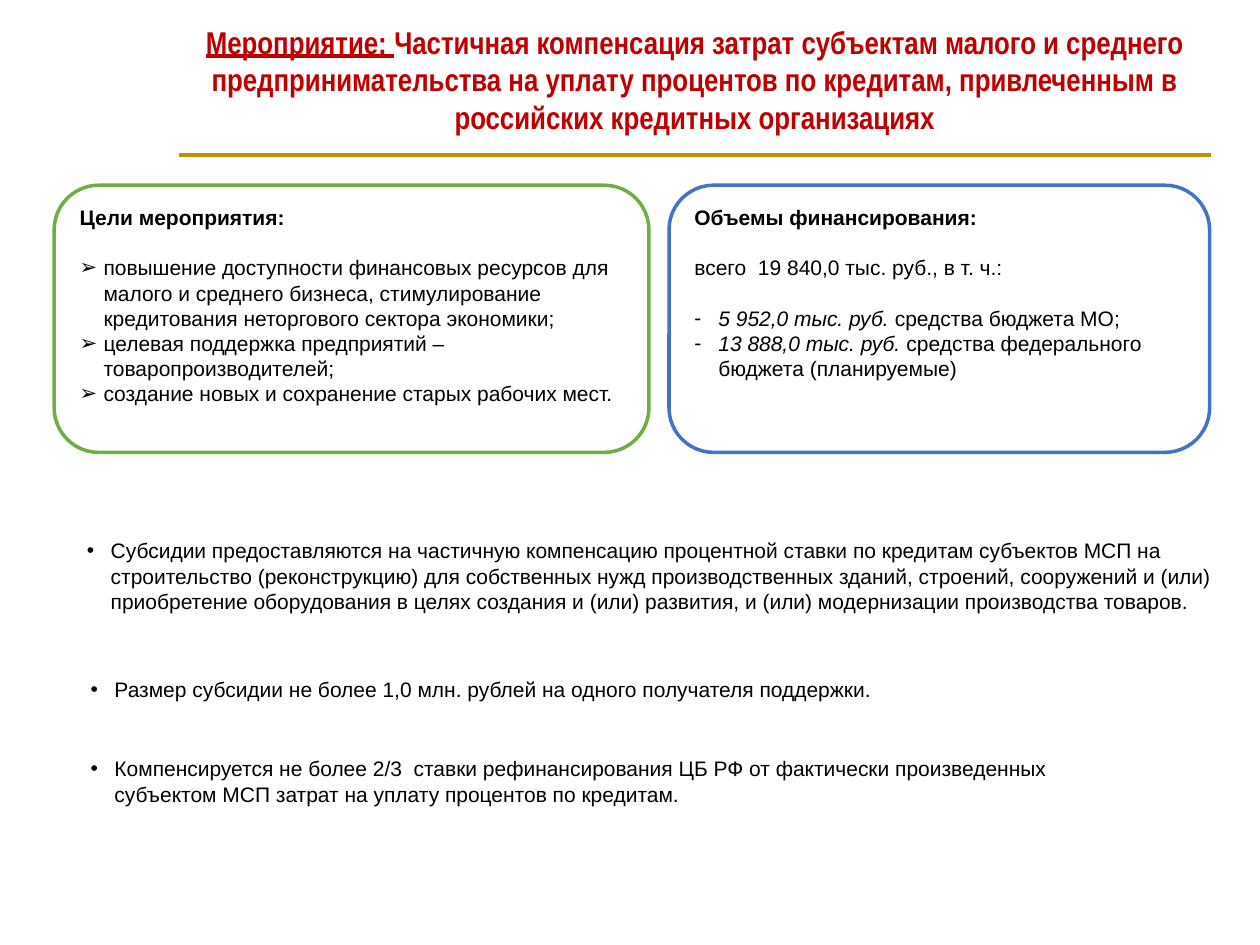
from lxml import etree
from pptx import Presentation
from pptx.dml.color import RGBColor
from pptx.enum.shapes import MSO_CONNECTOR, MSO_SHAPE
from pptx.enum.text import MSO_ANCHOR, PP_ALIGN
from pptx.oxml.ns import qn
from pptx.util import Inches, Pt

RED = RGBColor(0xC0, 0x00, 0x00)
GOLD = RGBColor(0xBF, 0x90, 0x00)
GREEN = RGBColor(0x70, 0xAD, 0x47)
BLUE = RGBColor(0x44, 0x72, 0xC4)
BLACK = RGBColor(0x00, 0x00, 0x00)
WHITE = RGBColor(0xFF, 0xFF, 0xFF)


def set_bullet(paragraph, symbol):
    properties = paragraph._p.get_or_add_pPr()
    indent = Inches(0.19)
    properties.set("marL", str(indent))
    properties.set("indent", str(-indent))
    font = etree.SubElement(properties, qn("a:buFont"))
    font.set("typeface", "Arial")
    etree.SubElement(properties, qn("a:buChar")).set("char", symbol)


def write_paragraph(paragraph, runs, bullet=None, bold=False, gap=0):
    """Write (text, italic) runs as one left-aligned body paragraph."""
    if bullet:
        set_bullet(paragraph, bullet)
    paragraph.alignment = PP_ALIGN.LEFT
    paragraph.space_before = Pt(gap)
    paragraph.font.name = "Arial"
    paragraph.font.size = Pt(12)
    paragraph.font.bold = bold
    paragraph.font.color.rgb = BLACK
    for text, italic in runs:
        run = paragraph.add_run()
        run.text = text
        if italic:
            run.font.italic = True


prs = Presentation()
prs.slide_width, prs.slide_height = Inches(10), Inches(7.5)
slide = prs.slides.add_slide(prs.slide_layouts[5])

# Title
title = slide.shapes.title
title.left, title.top = Inches(1.42), Inches(0.13)
title.width, title.height = Inches(8.19), Inches(1.01)
title.text_frame.vertical_anchor = MSO_ANCHOR.TOP
heading = title.text_frame.paragraphs[0]
heading.alignment = PP_ALIGN.CENTER
heading.font.name = "Arial Narrow"
heading.font.size = Pt(18)
heading.font.bold = True
heading.font.color.rgb = RED
label = heading.add_run()
label.text = "Мероприятие: "
label.font.underline = True
heading.add_run().text = (
    "Частичная компенсация затрат субъектам малого и среднего "
    "предпринимательства на уплату процентов по кредитам, привлеченным в "
    "российских кредитных организациях"
)

# Rule under the title
rule = slide.shapes.add_connector(
    MSO_CONNECTOR.STRAIGHT, Inches(1.42), Inches(1.23), Inches(9.61), Inches(1.23)
)
rule.line.color.rgb = GOLD
rule.line.width = Pt(2)
etree.SubElement(rule._element.spPr, qn("a:effectLst"))

# Cards: left, width, outline, paragraphs (runs, bullet, bold, gap before)
LINE_GAP = 14.4
cards = [
    (0.43, 4.72, GREEN, [
        ([("Цели мероприятия:", False)], None, True, 0),
        ([("повышение доступности финансовых ресурсов для малого и среднего "
           "бизнеса, стимулирование кредитования неторгового сектора экономики;",
           False)], "➢", False, LINE_GAP),
        ([("целевая поддержка предприятий – товаропроизводителей;", False)],
         "➢", False, 0),
        ([("создание новых и сохранение старых рабочих мест.", False)],
         "➢", False, 0),
    ]),
    (5.31, 4.29, BLUE, [
        ([("Объемы финансирования:", False)], None, True, 0),
        ([("всего  19 840,0 тыс. руб., в т. ч.:", False)], None, False, LINE_GAP),
        ([("5 952,0 тыс. руб. ", True), ("средства бюджета МО;", False)],
         "-", False, LINE_GAP),
        ([("13 888,0 тыс. руб.", True),
          (" средства федерального бюджета (планируемые)", False)],
         "-", False, 0),
    ]),
]
for left, width, outline, paragraphs in cards:
    card = slide.shapes.add_shape(
        MSO_SHAPE.ROUNDED_RECTANGLE,
        Inches(left), Inches(1.47), Inches(width), Inches(2.12),
    )
    card.shadow.inherit = False
    card.fill.solid()
    card.fill.fore_color.rgb = WHITE
    card.line.color.rgb = outline
    card.line.width = Pt(2)
    frame = card.text_frame
    frame.word_wrap = True
    frame.vertical_anchor = MSO_ANCHOR.TOP
    for index, content in enumerate(paragraphs):
        paragraph = frame.add_paragraph() if index else frame.paragraphs[0]
        write_paragraph(paragraph, *content)

# Conditions of the subsidy: left, top, width, height, text
conditions = [
    (0.59, 4.22, 9.29, 0.71,
     "Субсидии предоставляются на частичную компенсацию процентной ставки по "
     "кредитам субъектов МСП на строительство (реконструкцию) для собственных "
     "нужд производственных зданий, строений, сооружений и (или) приобретение "
     "оборудования в целях создания и (или) развития, и (или) модернизации "
     "производства товаров."),
    (0.62, 5.32, 8.58, 0.3,
     "Размер субсидии не более 1,0 млн. рублей на одного получателя поддержки."),
    (0.62, 5.95, 8.55, 0.5,
     "Компенсируется не более 2/3  ставки рефинансирования ЦБ РФ от фактически "
     "произведенных субъектом МСП затрат на уплату процентов по кредитам."),
]
for left, top, width, height, text in conditions:
    condition = slide.shapes.add_textbox(
        Inches(left), Inches(top), Inches(width), Inches(height)
    )
    condition.text_frame.word_wrap = True
    write_paragraph(condition.text_frame.paragraphs[0], [(text, False)], "•")

prs.save("out.pptx")
